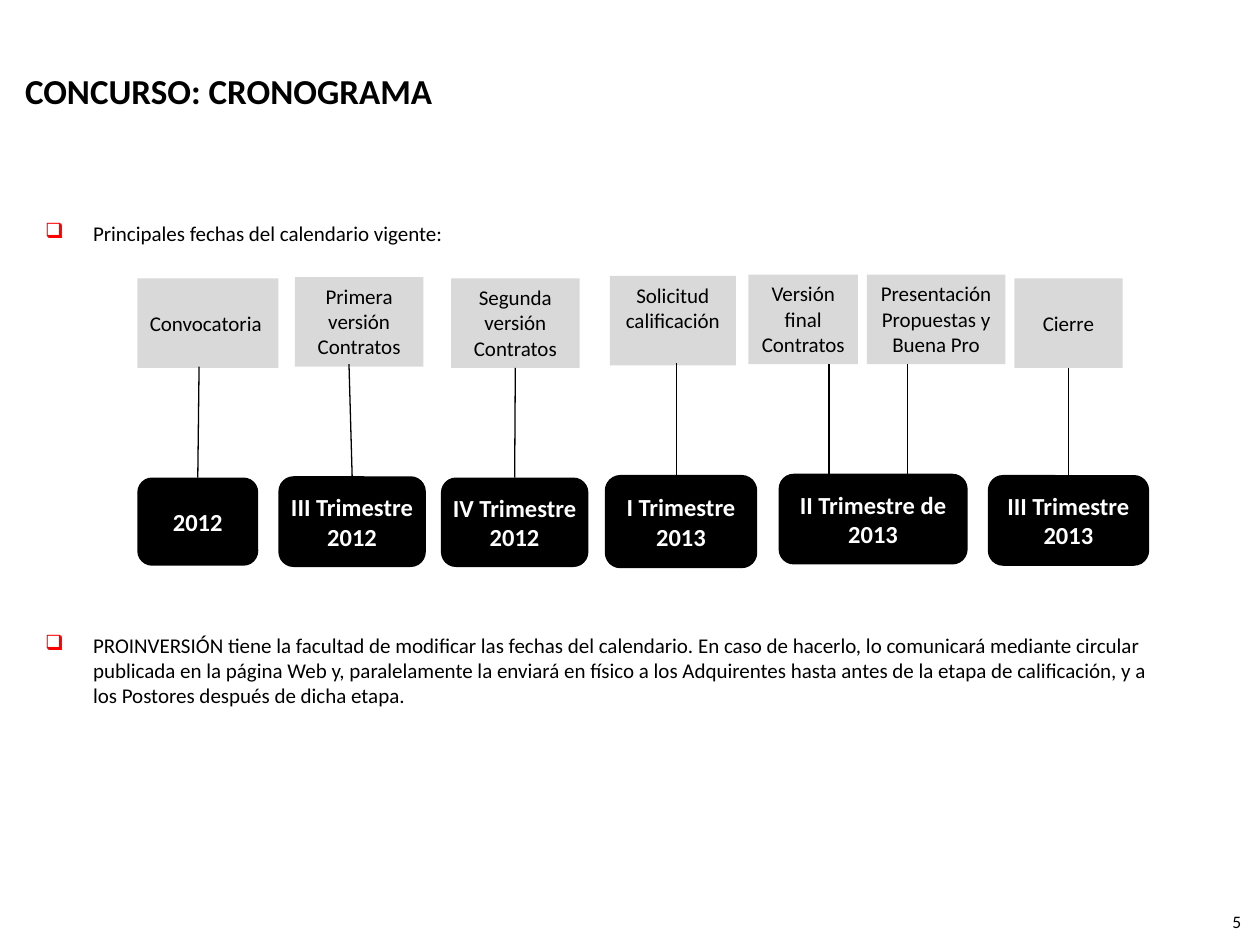
from typing import NamedTuple, Optional

from lxml.etree import SubElement
from pptx import Presentation
from pptx.dml.color import RGBColor
from pptx.enum.shapes import MSO_CONNECTOR as Link, MSO_SHAPE as Preset
from pptx.enum.text import MSO_ANCHOR as Anchor, PP_ALIGN as Align
from pptx.oxml.ns import qn
from pptx.util import Inches, Pt

COLORS = {"black": "000000", "white": "FFFFFF", "gray": "D9D9D9", "red": "FF0000"}
CARD_HEIGHT = 0.71


class Style(NamedTuple):
    size: int = 12
    color: str = "black"
    bold: bool = False
    align: Align = Align.LEFT
    anchor: Anchor = Anchor.TOP
    wrap: bool = True


class Block(NamedTuple):
    text: str
    left: float
    top: float
    width: float
    height: float
    style: Style


class Stem(NamedTuple):
    start: tuple[float, float]
    end: tuple[float, float]
    card: Optional[int] = None
    quarter: Optional[int] = None


TITLE = Style(size=20, bold=True, anchor=Anchor.MIDDLE)
BODY = Style()
NUMBER = Style(size=10, align=Align.RIGHT)
STAGE = Style(align=Align.CENTER)
MIDDLE_STAGE = STAGE._replace(anchor=Anchor.MIDDLE)
PERIOD = Style(14, "white", True, Align.CENTER, Anchor.MIDDLE, False)

HEADING = Block("CONCURSO: CRONOGRAMA", 0.1, 0.43, 9.39, 0.58, TITLE)
PAGE_NUMBER = Block("5", 9.45, 7.18, 0.5, 0.32, NUMBER)
NOTES = [
    Block("Principales fechas del calendario vigente:", 0.26, 1.7, 9.01, 0.31, BODY),
    Block(
        "PROINVERSIÓN tiene la facultad de modificar las fechas del calendario. "
        "En caso de hacerlo, lo comunicará mediante circular publicada en la página "
        "Web y, paralelamente la enviará en físico a los Adquirentes hasta antes de "
        "la etapa de calificación, y a los Postores después de dicha etapa.",
        0.26, 4.97, 9.01, 0.71, BODY,
    ),
]
CARDS = [
    Block("Convocatoria", 1.09, 2.21, 1.12, CARD_HEIGHT, BODY._replace(anchor=Anchor.MIDDLE)),
    Block("Primera versión Contratos", 2.34, 2.2, 1.02, CARD_HEIGHT, STAGE),
    Block("Segunda versión Contratos", 3.58, 2.21, 1.02, CARD_HEIGHT, STAGE),
    Block("Solicitud calificación", 4.84, 2.19, 1.0, CARD_HEIGHT, STAGE),
    Block("Versión final Contratos", 5.94, 2.18, 0.87, CARD_HEIGHT, STAGE),
    Block("Presentación Propuestas y Buena Pro", 6.88, 2.18, 1.1, CARD_HEIGHT, STAGE),
    Block("Cierre", 8.05, 2.21, 0.86, CARD_HEIGHT, MIDDLE_STAGE),
]
QUARTERS = [
    Block("2012", 1.09, 3.79, 0.96, 0.7, PERIOD),
    Block("III Trimestre\n2012", 2.21, 3.78, 1.17, 0.72, PERIOD),
    Block("IV Trimestre\n2012", 3.5, 3.79, 1.17, 0.71, PERIOD),
    Block("I Trimestre\n2013", 4.8, 3.77, 1.21, 0.74, PERIOD),
    Block("II Trimestre de\n2013", 6.18, 3.76, 1.5, 0.72, PERIOD),
    Block("III Trimestre\n2013", 7.84, 3.77, 1.28, 0.72, PERIOD),
]
STEMS = [
    Stem((1.58, 2.91), (1.57, 3.79), quarter=0),
    Stem((2.77, 2.89), (2.78, 3.78), quarter=1),
    Stem((4.09, 2.92), (4.09, 3.79), card=2, quarter=2),
    Stem((5.37, 2.88), (5.37, 3.8)),
    Stem((6.58, 2.89), (6.58, 3.77)),
    Stem((7.2, 2.89), (7.2, 3.76)),
    Stem((8.48, 2.92), (8.48, 3.77), card=6, quarter=5),
]


def rgb(name: str) -> RGBColor:
    return RGBColor.from_string(COLORS[name])


def apply(target, values: dict) -> None:
    for name, value in values.items():
        setattr(target, name, value)


def frame_of(block: Block) -> tuple:
    return tuple(Inches(n) for n in (block.left, block.top, block.width, block.height))


def add_bullet(para) -> None:
    props = para._p.get_or_add_pPr()
    props.set("marL", str(Inches(0.38)))
    props.set("indent", str(-Inches(0.38)))
    color = SubElement(props, qn("a:buClr"))
    SubElement(color, qn("a:srgbClr"), val=COLORS["red"])
    SubElement(props, qn("a:buChar"), char="❑")


def write(box, block: Block, bullet: bool = False) -> None:
    style, frame = block.style, box.text_frame
    apply(frame, {"word_wrap": style.wrap, "vertical_anchor": style.anchor})
    for index, line in enumerate(block.text.split("\n")):
        para = frame.add_paragraph() if index else frame.paragraphs[0]
        para.alignment = style.align
        if bullet:
            add_bullet(para)
        span = para.add_run()
        span.text = line
        apply(span.font, {"name": "Calibri", "size": Pt(style.size), "bold": style.bold})
        span.font.color.rgb = rgb(style.color)


def add_text(page, block: Block, bullet: bool = False) -> None:
    write(page.shapes.add_textbox(*frame_of(block)), block, bullet)


def add_box(page, block: Block, preset: Preset, fill: str):
    box = page.shapes.add_shape(preset, *frame_of(block))
    box.shadow.inherit = False
    box.fill.solid()
    box.fill.fore_color.rgb = rgb(fill)
    box.line.fill.background()
    write(box, block)
    return box


def add_stem(page, stem: Stem, cards: list, quarters: list) -> None:
    points = [Inches(n) for n in stem.start + stem.end]
    line = page.shapes.add_connector(Link.STRAIGHT, *points)
    line.line.color.rgb = rgb("black")
    line.line.width = Pt(0.75)
    SubElement(line._element.spPr, qn("a:effectLst"))
    if stem.card is not None:
        line.begin_connect(cards[stem.card], 2)
    if stem.quarter is not None:
        line.end_connect(quarters[stem.quarter], 0)


def main() -> None:
    """Build the tender timeline slide."""
    deck = Presentation()
    apply(deck, {"slide_width": Inches(10), "slide_height": Inches(7.5)})
    page = deck.slides.add_slide(deck.slide_layouts[6])
    add_text(page, HEADING)
    cards = [add_box(page, card, Preset.RECTANGLE, "gray") for card in CARDS]
    quarters = [add_box(page, item, Preset.ROUNDED_RECTANGLE, "black") for item in QUARTERS]
    for stem in STEMS:
        add_stem(page, stem, cards, quarters)
    for note in NOTES:
        add_text(page, note, bullet=True)
    add_text(page, PAGE_NUMBER)
    deck.save("out.pptx")


if __name__ == "__main__":
    main()
